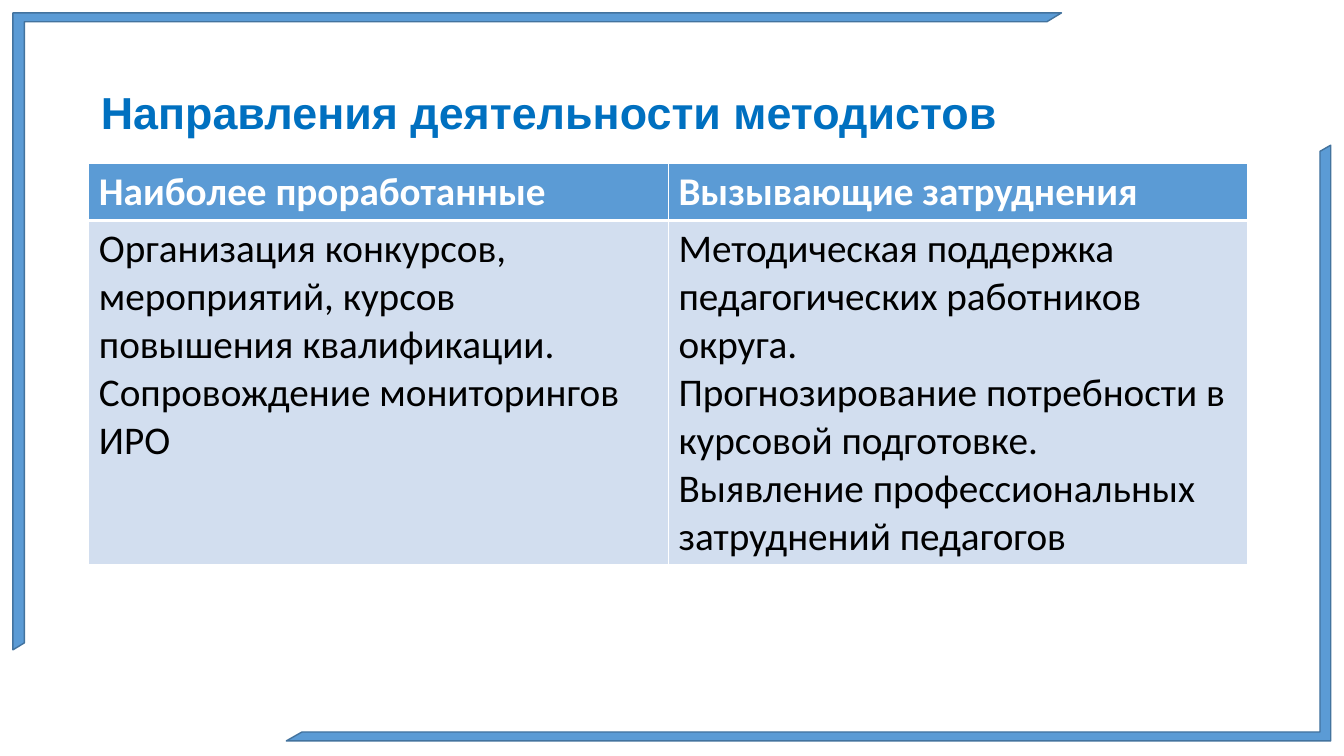
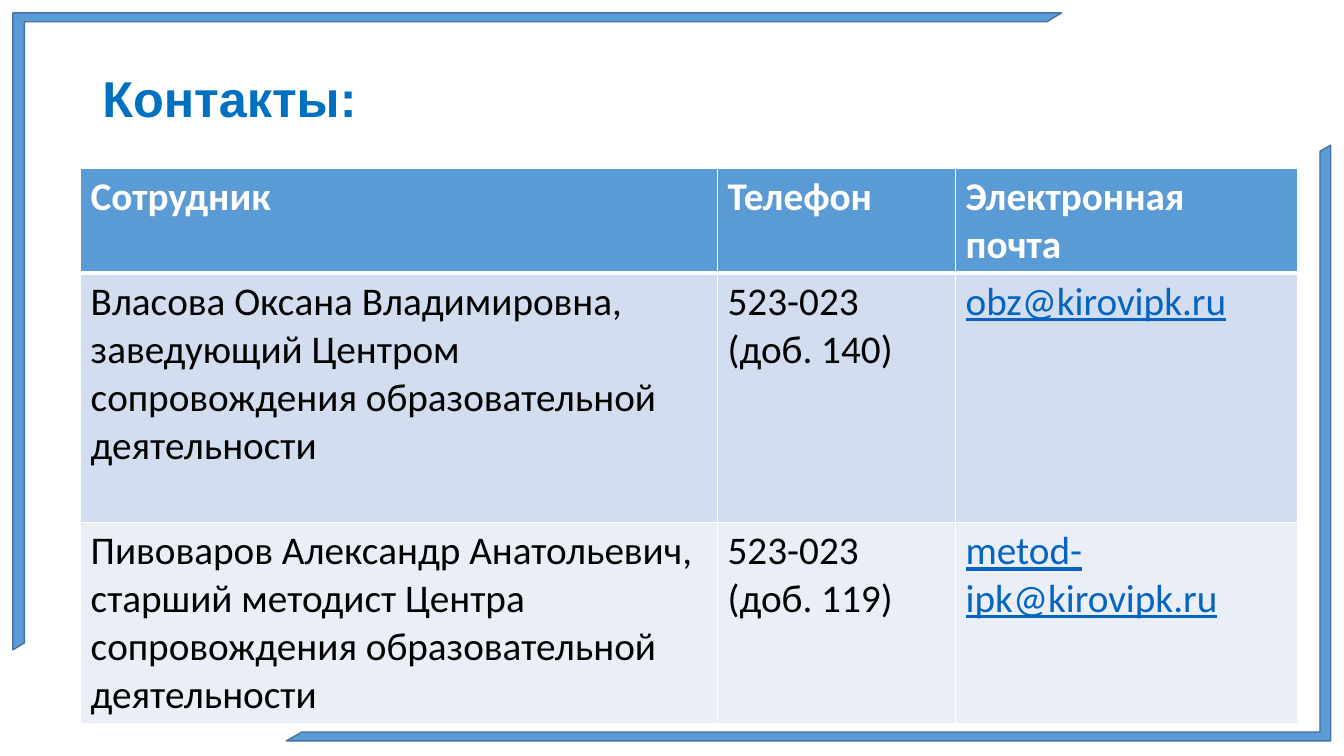
from dataclasses import dataclass

from lxml.etree import SubElement
from pptx import Presentation
from pptx.dml.color import RGBColor as Rgb
from pptx.enum.shapes import MSO_SHAPE as Shape
from pptx.enum.text import MSO_ANCHOR as Anchor
from pptx.oxml.ns import qn
from pptx.util import Pt


@dataclass(frozen=True)
class Theme:
    accent: str = "5B9BD5"
    accent_edge: str = "43739E"
    title: str = "0070C0"
    text: str = "000000"
    white: str = "FFFFFF"
    email: str = "0563C1"
    bands: tuple = ("D2DEEF", "EAEFF7")
    title_font: str = "Arial"
    body_font: str = "Calibri"
    title_size: int = 32
    large_title_size: int = 36
    body_size: int = 28
    thin: int = 1
    thick: int = 3


THEME = Theme()

DIRECTIONS = [
    ["Наиболее проработанные", "Вызывающие затруднения"],
    [
        "Организация конкурсов, мероприятий, курсов повышения квалификации.\n"
        "Сопровождение мониторингов ИРО",
        "Методическая поддержка педагогических работников округа.\n"
        "Прогнозирование потребности в курсовой подготовке.\n"
        "Выявление профессиональных затруднений педагогов",
    ],
]

CONTACTS = [
    ["Сотрудник", "Телефон", "Электронная почта"],
    [
        "Власова Оксана Владимировна, заведующий Центром "
        "сопровождения образовательной деятельности",
        "523-023 (доб. 140)",
        "obz@kirovipk.ru",
    ],
    [
        "Пивоваров Александр Анатольевич, старший методист Центра "
        "сопровождения образовательной деятельности",
        "523-023 (доб. 119)",
        "metod-ipk@kirovipk.ru",
    ],
]


def write_text(frame, text, *, font=THEME.body_font, size=THEME.body_size,
               color=THEME.text, bold=False, underline=False, spacing=None):
    """Fill a text frame, one paragraph for each line of text."""
    frame.word_wrap = True
    for index, line in enumerate(text.split("\n")):
        para = frame.add_paragraph() if index else frame.paragraphs[0]
        para.line_spacing = spacing
        span = para.add_run()
        span.text = line
        span.font.name = font
        span.font.size = Pt(size)
        span.font.bold = bold
        span.font.underline = underline
        span.font.color.rgb = Rgb.from_string(color)


def add_half_frame(slide, left, top, width, height, *, adjust, rotation=0):
    frame = slide.shapes.add_shape(
        Shape.HALF_FRAME, Pt(left), Pt(top), Pt(width), Pt(height))
    for index, value in enumerate(adjust):
        frame.adjustments[index] = value
    frame.rotation = rotation
    frame.shadow.inherit = False
    frame.fill.solid()
    frame.fill.fore_color.rgb = Rgb.from_string(THEME.accent)
    frame.line.color.rgb = Rgb.from_string(THEME.accent_edge)
    frame.line.width = Pt(THEME.thin)
    return frame


def frame_layout(slide):
    """Draw both corner frames and move them to the layout all slides share."""
    frames = [
        add_half_frame(slide, 9.2, 9.2, 749, 455, adjust=(0.014, 0.018)),
        add_half_frame(slide, 204.5, 103.7, 746, 425.5,
                       adjust=(0.015, 0.018), rotation=180),
    ]
    for frame in frames:
        slide.slide_layout.element.cSld.spTree.append(frame.element)


def add_title(slide, text, left, top, *, size=THEME.title_size):
    box = slide.shapes.add_textbox(Pt(left), Pt(top), Pt(828), Pt(104))
    box.text_frame.vertical_anchor = Anchor.MIDDLE
    write_text(box.text_frame, text, font=THEME.title_font, size=size,
               color=THEME.title, bold=True, spacing=0.9)


def set_borders(cell, *, top, bottom):
    widths = {"L": THEME.thin, "R": THEME.thin, "T": top, "B": bottom}
    properties = cell._tc.get_or_add_tcPr()
    for side, width in widths.items():
        line = SubElement(properties, qn(f"a:ln{side}"), w=str(Pt(width)))
        fill = SubElement(line, qn("a:solidFill"))
        SubElement(fill, qn("a:srgbClr"), val=THEME.white)


def format_cell(cell, text, row):
    """Style a cell by its row: header first, then alternating bands."""
    header = row == 0
    email = "@" in text
    set_borders(cell, top=THEME.thick if row == 1 else THEME.thin,
                bottom=THEME.thick if header else THEME.thin)
    background = THEME.accent if header else THEME.bands[(row - 1) % 2]
    cell.fill.solid()
    cell.fill.fore_color.rgb = Rgb.from_string(background)
    color = THEME.white if header else THEME.email if email else THEME.text
    write_text(cell.text_frame, text, color=color, bold=header, underline=email)


def add_text_table(slide, rows, left, top, *, widths, heights):
    table = slide.shapes.add_table(
        len(rows), len(widths), Pt(left), Pt(top),
        Pt(sum(widths)), Pt(sum(heights))).table
    for column, width in zip(table.columns, widths):
        column.width = Pt(width)
    for row, (texts, height) in enumerate(zip(rows, heights)):
        table.rows[row].height = Pt(height)
        for column, text in enumerate(texts):
            format_cell(table.cell(row, column), text, row)


def main():
    deck = Presentation()
    deck.slide_width, deck.slide_height = Pt(960), Pt(540)
    blank = deck.slide_layouts[6]

    directions = deck.slides.add_slide(blank)
    frame_layout(directions)
    add_title(directions, "Направления деятельности методистов", 65, 30)
    add_text_table(directions, DIRECTIONS, 63.5, 116.6,
                   widths=(414, 414), heights=(41, 246))

    contacts = deck.slides.add_slide(blank)
    add_title(contacts, "Контакты:", 66, 20, size=THEME.large_title_size)
    add_text_table(contacts, CONTACTS, 57.6, 120.2,
                   widths=(455, 170, 244), heights=(75, 178, 144))

    deck.save("out.pptx")


if __name__ == "__main__":
    main()
